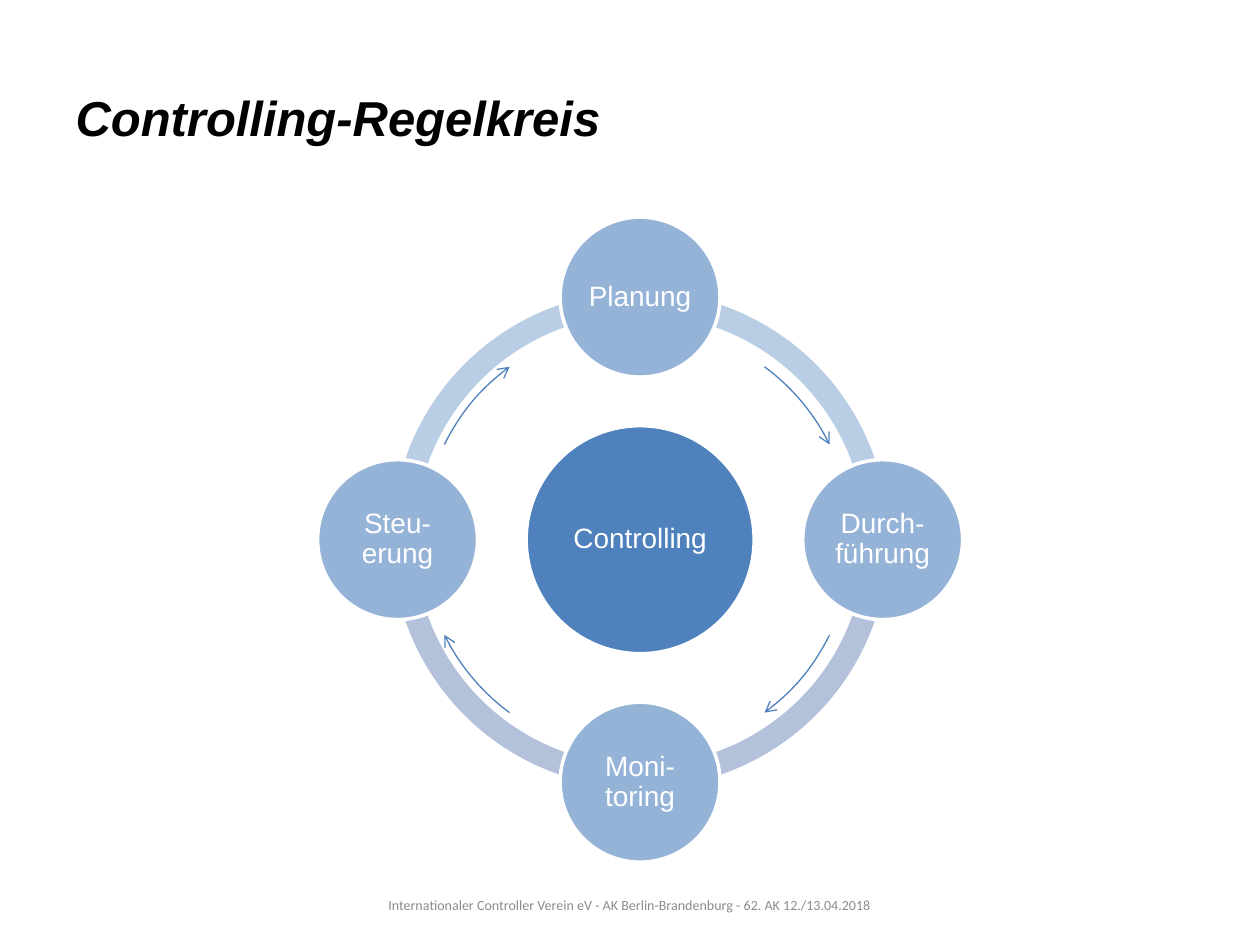
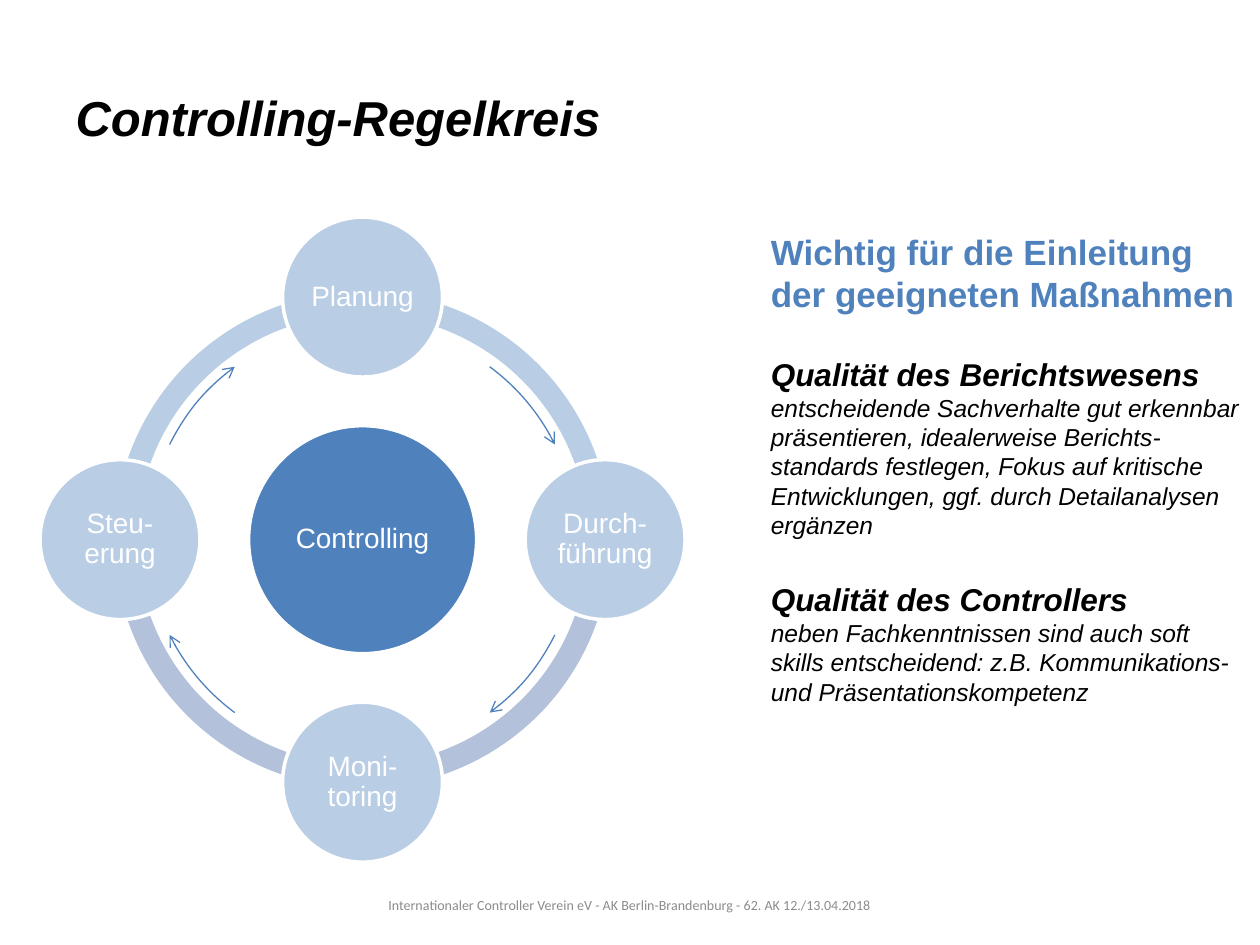
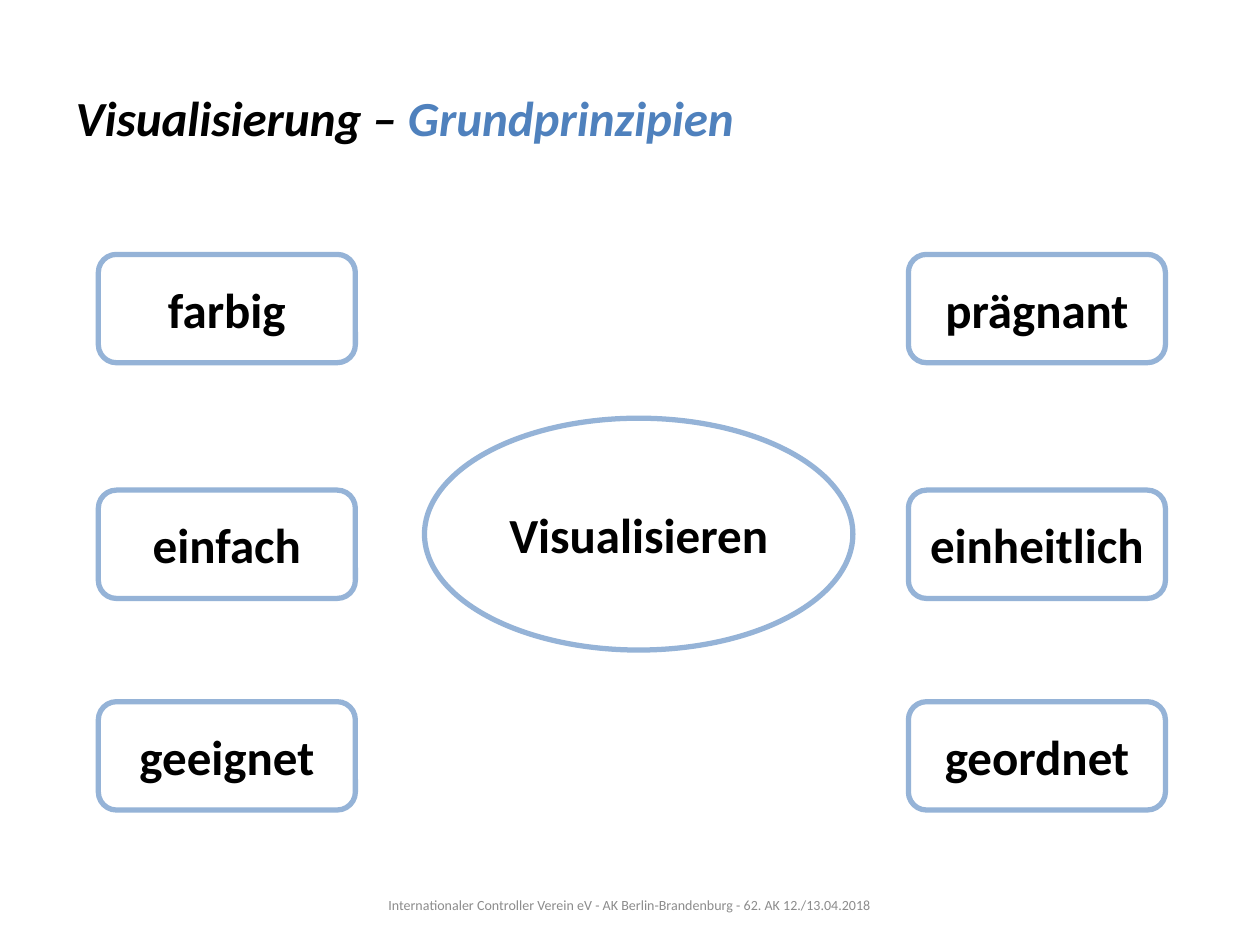
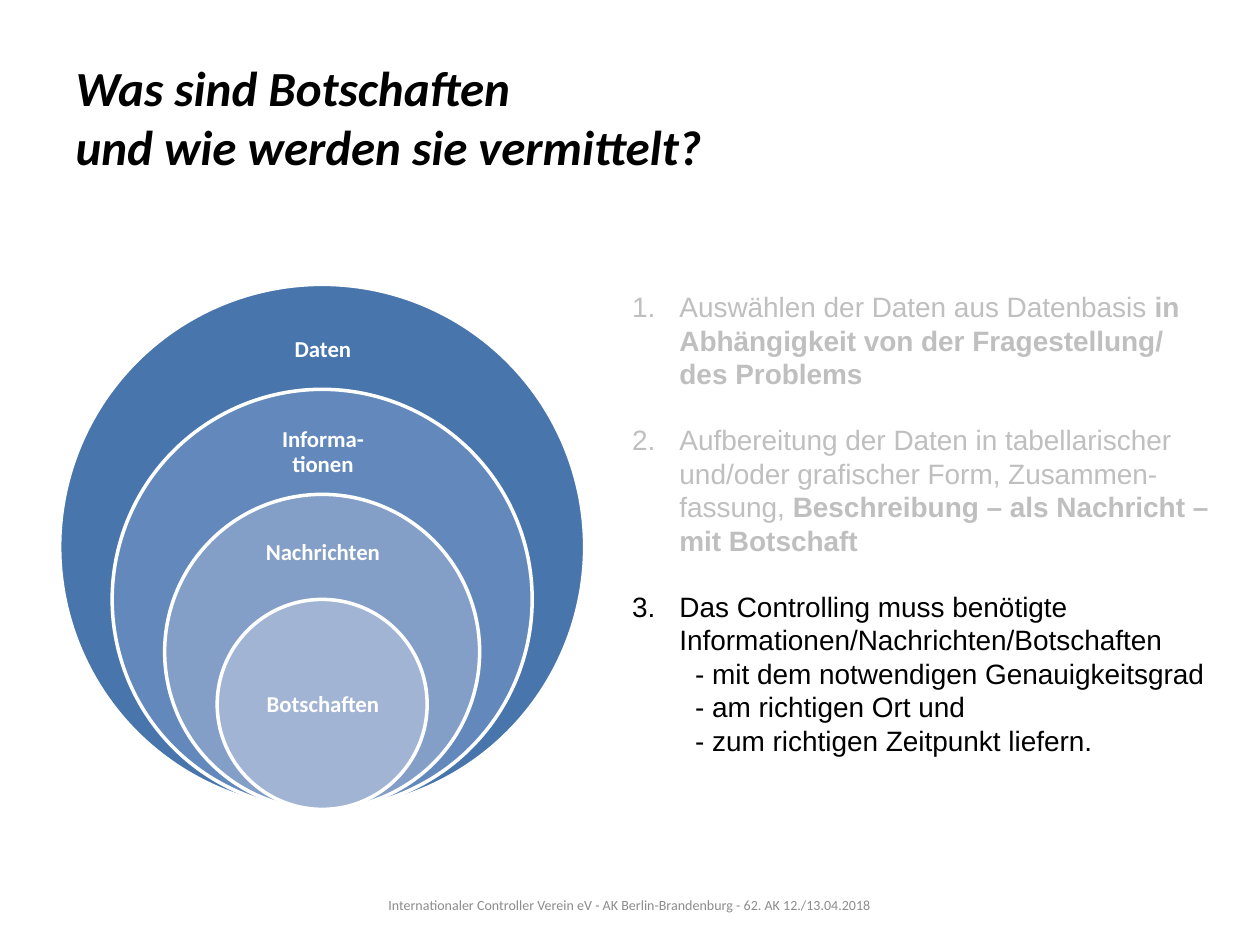
"""Builds four slides on the controlling cycle, visualisation and messages."""
from dataclasses import dataclass

from lxml import etree
from pptx import Presentation
from pptx import util as u
from pptx.dml.color import RGBColor
from pptx.enum import shapes, text
from pptx.oxml.ns import qn

SHAPE = shapes.MSO_SHAPE
CENTER, LEFT = text.PP_ALIGN.CENTER, text.PP_ALIGN.LEFT
TOP, MIDDLE = text.MSO_ANCHOR.TOP, text.MSO_ANCHOR.MIDDLE
FOOTER = "Internationaler Controller Verein eV - AK Berlin-Brandenburg - 62. AK 12./13.04.2018"


@dataclass(frozen=True)
class Theme:
    """Colours, fonts and type sizes of the deck."""
    black: str = "000000"
    white: str = "FFFFFF"
    grey: str = "8C8C8C"
    accent: str = "4F81BD"
    mid: str = "95B3D7"
    pale: str = "B9CDE5"
    pale_violet: str = "B3C1DB"
    nested: tuple = ("4875AC", "6389BC", "839EC7", "A2B4D4")
    sans: str = "Arial"
    body: str = "Calibri"
    title: float = 28
    headline: float = 20
    subhead: float = 18
    text: float = 16
    detail: float = 14
    label: float = 13
    footer: float = 8


@dataclass(frozen=True)
class Style:
    """Character format of one run."""
    size: float
    font: str
    color: str
    bold: bool = False
    italic: bool = False


class Deck:
    """Holds the theme, the presentation and the current slide."""

    def __init__(self, theme):
        self.theme = theme
        self.presentation = Presentation()
        self.presentation.slide_width = u.Pt(720)
        self.presentation.slide_height = u.Pt(540)
        self.slide = None

    def new_slide(self, runs, font):
        """Adds a slide with its title and footer; runs are (text, colour) pairs."""
        theme = self.theme
        self.slide = self.presentation.slides.add_slide(self.presentation.slide_layouts[5])
        title = self.slide.shapes.title
        title.left, title.top, title.width, title.height = map(u.Pt, (36, 21.6, 648, 90))
        self.prepare(title.text_frame, MIDDLE)
        self.add_runs(title.text_frame.paragraphs[0],
                      [(words, Style(theme.title, font, color, True, True))
                       for words, color in runs])
        self.text_box(212.4, 502.5, 295.2, 28.8,
                      [[(FOOTER, Style(theme.footer, theme.body, theme.grey))]], MIDDLE, CENTER)

    def prepare(self, frame, anchor, inset=None):
        """Sets wrapping, anchor and, if given, equal insets."""
        frame.word_wrap = True
        frame.auto_size = text.MSO_AUTO_SIZE.NONE
        frame.vertical_anchor = anchor
        if inset is not None:
            frame.margin_left = frame.margin_top = u.Pt(inset)
            frame.margin_right = frame.margin_bottom = u.Pt(inset)

    def add_runs(self, paragraph, runs, align=LEFT, spacing=None):
        """Fills a paragraph run by run; a newline becomes a line break."""
        paragraph.alignment = align
        if spacing:
            paragraph.line_spacing = spacing
        for words, style in runs:
            for index, line in enumerate(words.split("\n")):
                if index:
                    paragraph.add_line_break()
                run = paragraph.add_run()
                run.text = line
                run.font.size = u.Pt(style.size)
                run.font.name = style.font
                run.font.bold = style.bold
                run.font.italic = style.italic
                run.font.color.rgb = RGBColor.from_string(style.color)

    def text_box(self, left, top, width, height, paragraphs, anchor=TOP, align=LEFT,
                 inset=None, spacing=None):
        """Adds a text box and returns its paragraphs."""
        frame = self.slide.shapes.add_textbox(*map(u.Pt, (left, top, width, height))).text_frame
        self.prepare(frame, anchor, inset)
        for index, runs in enumerate(paragraphs):
            paragraph = frame.add_paragraph() if index else frame.paragraphs[0]
            self.add_runs(paragraph, runs, align, spacing)
        return frame.paragraphs

    def shape(self, kind, left, top, width, height, fill=None, line=None, weight=2,
              adjustments=()):
        """Adds a preset shape without shadow."""
        shape = self.slide.shapes.add_shape(kind, *map(u.Pt, (left, top, width, height)))
        shape.shadow.inherit = False
        for index, value in enumerate(adjustments):
            shape.adjustments[index] = value
        if fill:
            shape.fill.solid()
            shape.fill.fore_color.rgb = RGBColor.from_string(fill)
        else:
            shape.fill.background()
        if line:
            shape.line.color.rgb = RGBColor.from_string(line)
            shape.line.width = u.Pt(weight)
        else:
            shape.line.fill.background()
        return shape

    def disc(self, x, y, diameter, fill):
        """Adds a white-edged circle around a centre."""
        return self.shape(SHAPE.OVAL, x - diameter / 2, y - diameter / 2, diameter, diameter,
                          fill, self.theme.white)

    def caption(self, shape, words, style, inset=None, spacing=None):
        """Puts centred text into a shape."""
        self.prepare(shape.text_frame, MIDDLE, inset)
        self.add_runs(shape.text_frame.paragraphs[0], [(words, style)], CENTER, spacing)

    def arc_arrow(self, x, y, diameter, start, end):
        """Adds a clockwise arc between two angles with an arrowhead."""
        arc = self.shape(SHAPE.ARC, x - diameter / 2, y - diameter / 2, diameter, diameter,
                         line=self.theme.accent, weight=0.75,
                         adjustments=[angle * 0.6 for angle in (start, end)])
        etree.SubElement(arc.element.spPr.find(qn("a:ln")), qn("a:tailEnd"), type="arrow")

    def cycle(self, x, arrow_x, fill):
        """Draws the control cycle: arrows, ring, hub and four stations."""
        theme, y, reach = self.theme, 308.4, 138.6
        style = Style(theme.text, theme.sans, theme.white)
        for turn in range(4):
            start = 90 * turn + (36.4 if turn % 2 else 26.3)
            self.arc_arrow(arrow_x, y, 245.5, start, start + 27.3)
        for turn in range(4):
            self.shape(SHAPE.BLOCK_ARC, x - 141.9, y - 141.9, 283.8, 283.8,
                       theme.pale_violet if turn < 2 else theme.pale,
                       adjustments=(54 * turn, 54 * (turn + 1) % 216, 0.046))
        stations = (("Controlling", 0, 0, 130.3, theme.accent),
                    ("Planung", 0, -1, 91.4, fill),
                    ("Durch-führung", 1, 0, 91.4, fill),
                    ("Moni-toring", 0, 1, 91.4, fill),
                    ("Steu-erung", -1, 0, 91.4, fill))
        for words, across, down, diameter, color in stations:
            disc = self.disc(x + across * reach, y + down * reach, diameter, color)
            self.caption(disc, words, style, 1.5, 0.9)

    def veil(self, left, top, width, height, opacity):
        """Adds a translucent white rectangle."""
        shape = self.shape(SHAPE.RECTANGLE, left, top, width, height, self.theme.white)
        color = next(shape.element.spPr.iter(qn("a:srgbClr")))
        etree.SubElement(color, qn("a:alpha"), val=str(opacity * 1000))

    def indent(self, paragraph, margin, hanging, numbered=False):
        """Sets a hanging indent and optional numbering."""
        properties = paragraph._p.get_or_add_pPr()
        properties.set("marL", str(u.Pt(margin)))
        properties.set("indent", str(-u.Pt(hanging)))
        if numbered:
            etree.SubElement(properties, qn("a:buFont"), typeface="+mj-lt")
            etree.SubElement(properties, qn("a:buAutoNum"), type="arabicPeriod")


def quality_slide(deck):
    """Control cycle with notes on report and controller quality."""
    theme = deck.theme
    deck.new_slide([("Controlling-Regelkreis", theme.black)], theme.sans)
    deck.cycle(207.2, 207, theme.pale)
    headline = Style(theme.headline, theme.sans, theme.accent, True)
    subhead = Style(theme.subhead, theme.sans, theme.black, True, True)
    detail = Style(theme.detail, theme.sans, theme.black, False, True)
    paragraphs = deck.text_box(433.4, 128.2, 286.6, 283.7, [
        [("Wichtig für die Einleitung der geeigneten Maßnahmen", headline)],
        [("Qualität des Berichtswesens ", subhead),
         ("entscheidende Sachverhalte gut erkennbar präsentieren, idealerweise "
          "Berichts-standards festlegen, Fokus auf kritische Entwicklungen, "
          "ggf. durch Detailanalysen ergänzen", detail)],
        [("Qualität des Controllers", subhead)],
        [("neben Fachkenntnissen sind auch soft skills entscheidend: z.B. "
          "Kommunikations- und Präsentationskompetenz", detail)]])
    for paragraph in paragraphs[1:3]:
        paragraph.space_before = u.Pt(23)


def principles_slide(deck):
    """Six principles around the central term."""
    theme = deck.theme
    deck.new_slide([("Visualisierung – ", theme.black), ("Grundprinzipien", theme.accent)],
                   theme.body)
    style = Style(theme.title, theme.body, theme.black, True)
    center = deck.shape(SHAPE.OVAL, 242.6, 239, 244.8, 132.5, theme.white, theme.mid, 3)
    deck.caption(center, "Visualisieren", style)
    columns = ((56.2, ("farbig", "einfach", "geeignet")),
               (519.1, ("prägnant", "einheitlich", "geordnet")))
    for left, principles in columns:
        for top, principle in zip((145.4, 280.1, 401), principles):
            box = deck.shape(SHAPE.ROUNDED_RECTANGLE, left, top, 146.9, 61.9,
                             theme.white, theme.mid, 3)
            deck.caption(box, principle, style)


def messages_slide(deck):
    """Nested circles from data to messages, with three numbered steps."""
    theme = deck.theme
    deck.new_slide([("Was sind Botschaften\nund wie werden sie vermittelt?", theme.black)],
                   theme.body)
    label = Style(theme.label, theme.body, theme.white, True)
    levels = (("Daten", 177.1, 45.4), ("Informa-tionen", 236.9, 43.2),
              ("Nachrichten", 295.9, 40.3), ("Botschaften", 373, 59.8))
    for index, (words, top, height) in enumerate(levels):
        diameter = 300 - 60 * index
        deck.disc(184.1, 462.5 - diameter / 2, diameter, theme.nested[index])
        deck.text_box(142.2, top, 84.6, height, [[(words, label)]], MIDDLE, CENTER, 7.2, 0.9)
    plain = Style(theme.text, theme.sans, theme.black)
    strong = Style(theme.text, theme.sans, theme.black, True)
    paragraphs = deck.text_box(354.2, 162, 348.5, 278.6, [
        [("Auswählen der Daten aus Datenbasis ", plain),
         ("in Abhängigkeit von der Fragestellung/ des Problems", strong)],
        [("Aufbereitung der Daten in tabellarischer und/oder grafischer Form, "
          "Zusammen-fassung, ", plain),
         ("Beschreibung – als Nachricht – mit Botschaft", strong)],
        [("Das Controlling muss benötigte Informationen/Nachrichten/Botschaften", plain)],
        [("- mit dem notwendigen Genauigkeitsgrad", plain)],
        [("- am richtigen Ort und", plain)],
        [("- zum richtigen Zeitpunkt liefern.", plain)]])
    for paragraph in paragraphs[:3]:
        deck.indent(paragraph, 27, 27, True)
    for paragraph in paragraphs[1:3]:
        paragraph.space_before = u.Pt(18.4)
    for paragraph in paragraphs[3:]:
        paragraph.level = 1
        deck.indent(paragraph, 58.5, 22.5)
    deck.veil(346.3, 126, 345.6, 195.1, 75)


def main():
    """Builds and saves the deck."""
    deck = Deck(Theme())
    deck.new_slide([("Controlling-Regelkreis", deck.theme.black)], deck.theme.sans)
    deck.cycle(365.8, 364, deck.theme.mid)
    quality_slide(deck)
    principles_slide(deck)
    messages_slide(deck)
    deck.presentation.save("out.pptx")


if __name__ == "__main__":
    main()
